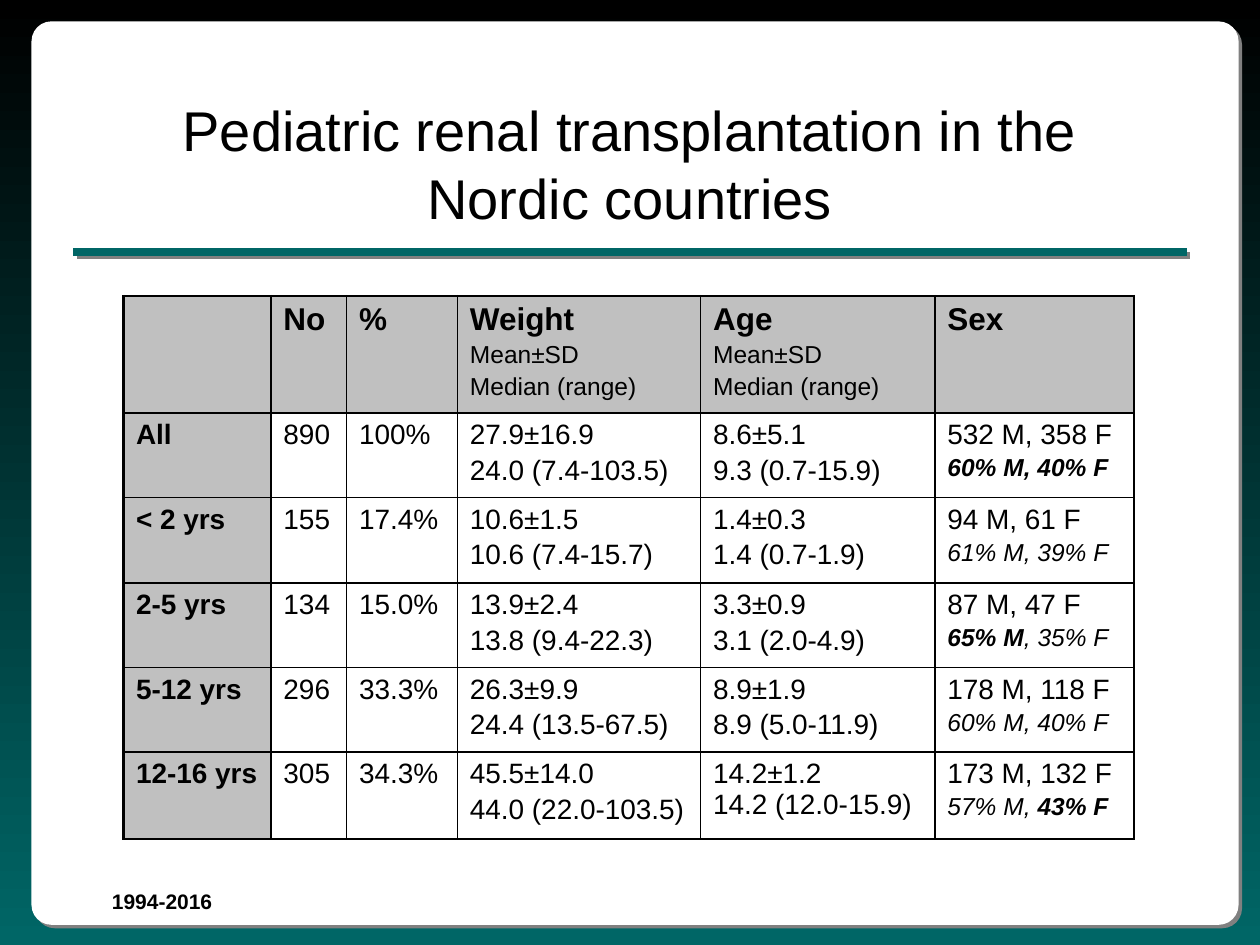
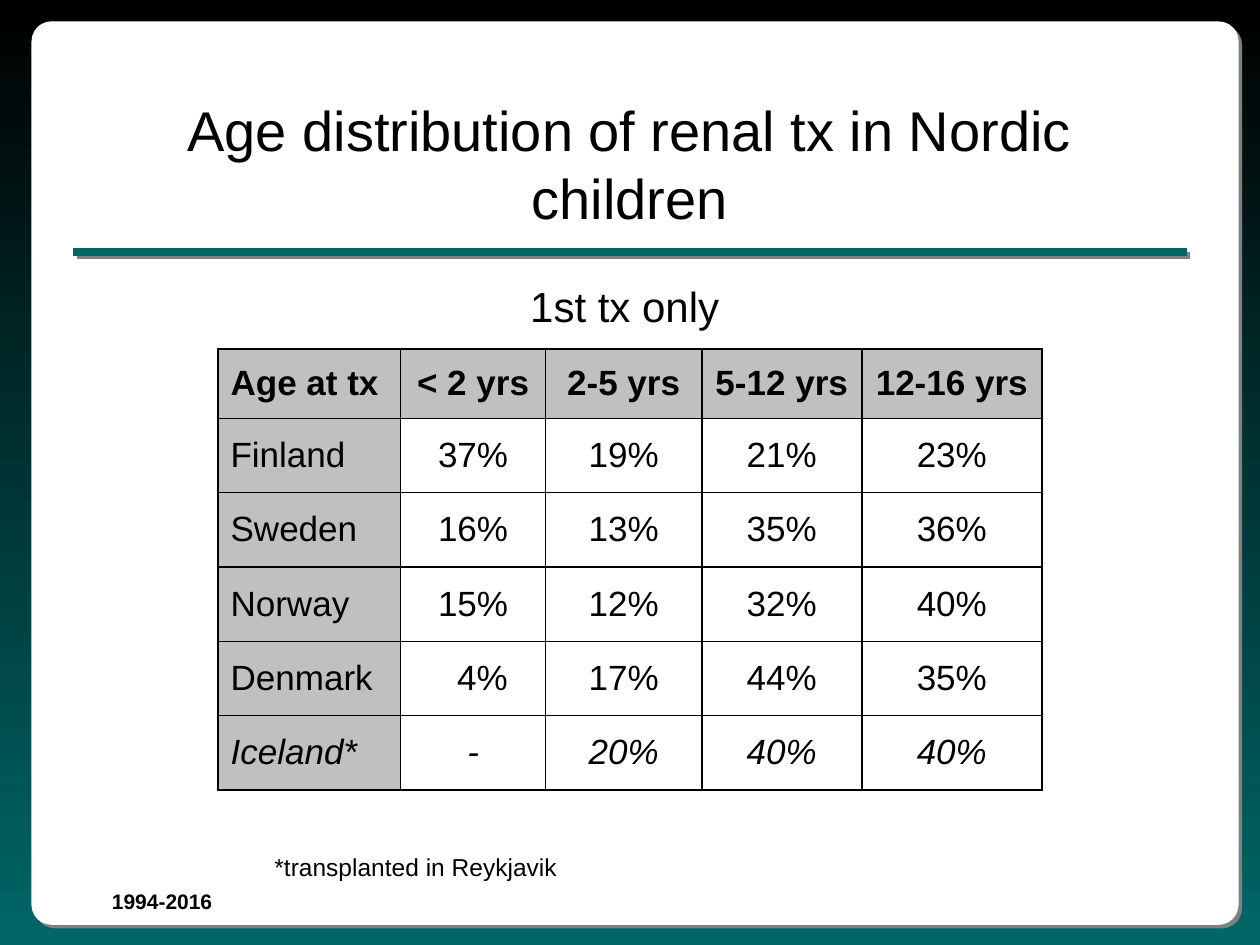
from lxml import etree
from pptx import Presentation
from pptx import util as u
from pptx.dml import color
from pptx.enum import shapes, text
from pptx.oxml import ns, parse_xml

INK, TEAL, WHITE, GREY, SHADE = "000000", "006666", "FFFFFF", "C0C0C0", "808080"
FACE = "Arial"
LEFT, MID = text.PP_ALIGN.LEFT, text.PP_ALIGN.CENTER
THIN, THICK = 1, 1.5

HEADS = ["", "No", "%", "Weight", "Age", "Sex"]
STATS = ["Mean±SD", "Median (range)"]
GROUPS = [
    ["All", "890", "100%", ["27.9±16.9", "24.0 (7.4-103.5)"],
     ["8.6±5.1", "9.3 (0.7-15.9)"], ["532 M, 358 F", "|60% M, 40% F|"]],
    ["< 2 yrs", "155", "17.4%", ["10.6±1.5", "10.6 (7.4-15.7)"],
     ["1.4±0.3", "1.4 (0.7-1.9)"], ["94 M, 61 F", "61% M, 39% F"]],
    ["2-5 yrs", "134", "15.0%", ["13.9±2.4", "13.8 (9.4-22.3)"],
     ["3.3±0.9", "3.1 (2.0-4.9)"], ["87 M, 47 F", "|65% M|, 35% F"]],
    ["5-12 yrs", "296", "33.3%", ["26.3±9.9", "24.4 (13.5-67.5)"],
     ["8.9±1.9", "8.9 (5.0-11.9)"], ["178 M, 118 F", "60% M, 40% F"]],
    ["12-16 yrs", "305", "34.3%", ["45.5±14.0", "44.0 (22.0-103.5)"],
     ["14.2±1.2\v14.2 (12.0-15.9)"], ["173 M, 132 F", "57% M, |43% F|"]],
]
LANDS = [
    ["Age at tx", "< 2 yrs", "2-5 yrs", "5-12 yrs", "12-16 yrs"],
    ["Finland", "37%", "19%", "21%", "23%"],
    ["Sweden", "16%", "13%", "35%", "36%"],
    ["Norway", "15%", "12%", "32%", "40%"],
    ["Denmark", "4%", "17%", "44%", "35%"],
    ["Iceland*", "-", "20%", "40%", "40%"],
]


def rgb(code):
    return color.RGBColor.from_string(code)


def inch(*sizes):
    return [u.Inches(size) for size in sizes]


def style(para, size, bold=False, slant=False, align=LEFT):
    para.alignment = align
    font = para.font
    font.name, font.size = FACE, u.Pt(size)
    font.bold, font.italic = bold, slant
    font.color.rgb = rgb(INK)


def write(para, words):
    parts = words.split("|")
    if len(parts) == 1:
        para.text = words
        return
    for spot, part in enumerate(parts):
        if part:
            run = para.add_run()
            run.text = part
            run.font.bold = spot % 2 == 1


def label(slide, words, box, size, wrap=True, **look):
    frame = slide.shapes.add_textbox(*inch(*box)).text_frame
    frame.word_wrap = wrap
    frame.paragraphs[0].text = words
    style(frame.paragraphs[0], size, **look)
    return frame


def cast(shape):
    shape.element.spPr.append(parse_xml(
        f'<a:effectLst {ns.nsdecls("a")}><a:outerShdw dist="35560" dir="2700000" algn="ctr" '
        f'rotWithShape="0"><a:srgbClr val="{SHADE}"/></a:outerShdw></a:effectLst>'))


def base(deck, title):
    slide = deck.slides.add_slide(deck.slide_layouts[6])
    back = slide.background.fill
    back.gradient()
    back.gradient_angle = 270
    for stop, code in zip(back.gradient_stops, (INK, TEAL)):
        stop.color.rgb = rgb(code)
    card = slide.shapes.add_shape(
        shapes.MSO_SHAPE.ROUNDED_RECTANGLE, *inch(0.25, 0.17, 9.58, 7.17))
    card.adjustments[0] = 0.022
    card.fill.solid()
    card.fill.fore_color.rgb = rgb(WHITE)
    card.line.fill.background()
    cast(card)
    label(slide, "1994-2016", (0.79, 7, 1.47, 0.3), 12, bold=True)
    rule = slide.shapes.add_connector(
        shapes.MSO_CONNECTOR.STRAIGHT, *inch(0.58, 2, 9.42, 2))
    rule.line.color.rgb = rgb(TEAL)
    rule.line.width = u.Pt(4.5)
    cast(rule)
    head = label(slide, title, (0.75, 0.67, 8.5, 1.25), 32, align=MID)
    head.vertical_anchor = text.MSO_ANCHOR.MIDDLE
    return slide


def edge(cell, side, width):
    props = cell._tc.get_or_add_tcPr()
    line = etree.SubElement(props, ns.qn(f"a:ln{side}"), w=str(u.Pt(width)))
    fill = etree.SubElement(line, ns.qn("a:solidFill"))
    etree.SubElement(fill, ns.qn("a:srgbClr"), val=INK)


def grid(slide, left, top, cols, rows):
    box = inch(left, top, sum(cols), sum(rows))
    table = slide.shapes.add_table(len(rows), len(cols), *box).table
    table.first_row = table.horz_banding = False
    for col, width in zip(table.columns, cols):
        col.width = u.Inches(width)
    for row, height in zip(table.rows, rows):
        row.height = u.Inches(height)
    for r in range(len(rows)):
        for c in range(len(cols)):
            cell = table.cell(r, c)
            outer = {"L": c == 0, "R": c == len(cols) - 1,
                     "T": r == 0, "B": r == len(rows) - 1}
            for side, rim in outer.items():
                edge(cell, side, THICK if rim else THIN)
            if r == 0 or c == 0:
                cell.fill.solid()
                cell.fill.fore_color.rgb = rgb(GREY)
            else:
                cell.fill.background()
    return table


def put(cell, lines):
    frame = cell.text_frame
    for spot, (words, size, look) in enumerate(lines):
        para = frame.add_paragraph() if spot else frame.paragraphs[0]
        write(para, words)
        style(para, size, **look)
        if spot:
            para.space_before = u.Pt(round(size * 0.16, 1))


def renal(deck):
    slide = base(deck, "Pediatric renal transplantation in the Nordic countries")
    table = grid(slide, 0.98, 2.35, [1.17, 0.6, 0.88, 1.93, 1.86, 1.58],
                 [0.92, 0.67, 0.68, 0.63, 0.67, 0.69])
    for c, head in enumerate(HEADS):
        lines = [(head, 18, {"bold": True})]
        if head in ("Weight", "Age"):
            lines += [(stat, 14, {}) for stat in STATS]
        put(table.cell(0, c), lines)
    for r, group in enumerate(GROUPS, 1):
        for c, item in enumerate(group):
            words = item if isinstance(item, list) else [item]
            lines = [(word, 16, {"bold": c == 0}) for word in words]
            if HEADS[c] == "Sex":
                lines[1] = (words[1], 14, {"slant": True})
            put(table.cell(r, c), lines)


def ages(deck):
    slide = base(deck, "Age distribution of renal tx in Nordic children")
    table = grid(slide, 1.73, 2.77, [1.45, 1.15, 1.24, 1.27, 1.43],
                 [0.55] + [0.59] * 5)
    for r, land in enumerate(LANDS):
        for c, words in enumerate(land):
            cell = table.cell(r, c)
            cell.vertical_anchor = text.MSO_ANCHOR.MIDDLE
            if words == "4%":
                cell.margin_left = u.Inches(0.25)
            look = {"bold": r == 0, "slant": land[0] == "Iceland*",
                    "align": MID if c else LEFT}
            put(cell, [(words, 20, look)])
    label(slide, "1st tx only", (4.11, 2.18, 1.72, 0.5), 24, wrap=False)
    label(slide, "*transplanted in Reykjavik", (2.08, 6.71, 2.46, 0.34), 14, wrap=False)


def main():
    deck = Presentation()
    deck.slide_width, deck.slide_height = inch(10, 7.5)
    renal(deck)
    ages(deck)
    deck.save("out.pptx")


if __name__ == "__main__":
    main()
